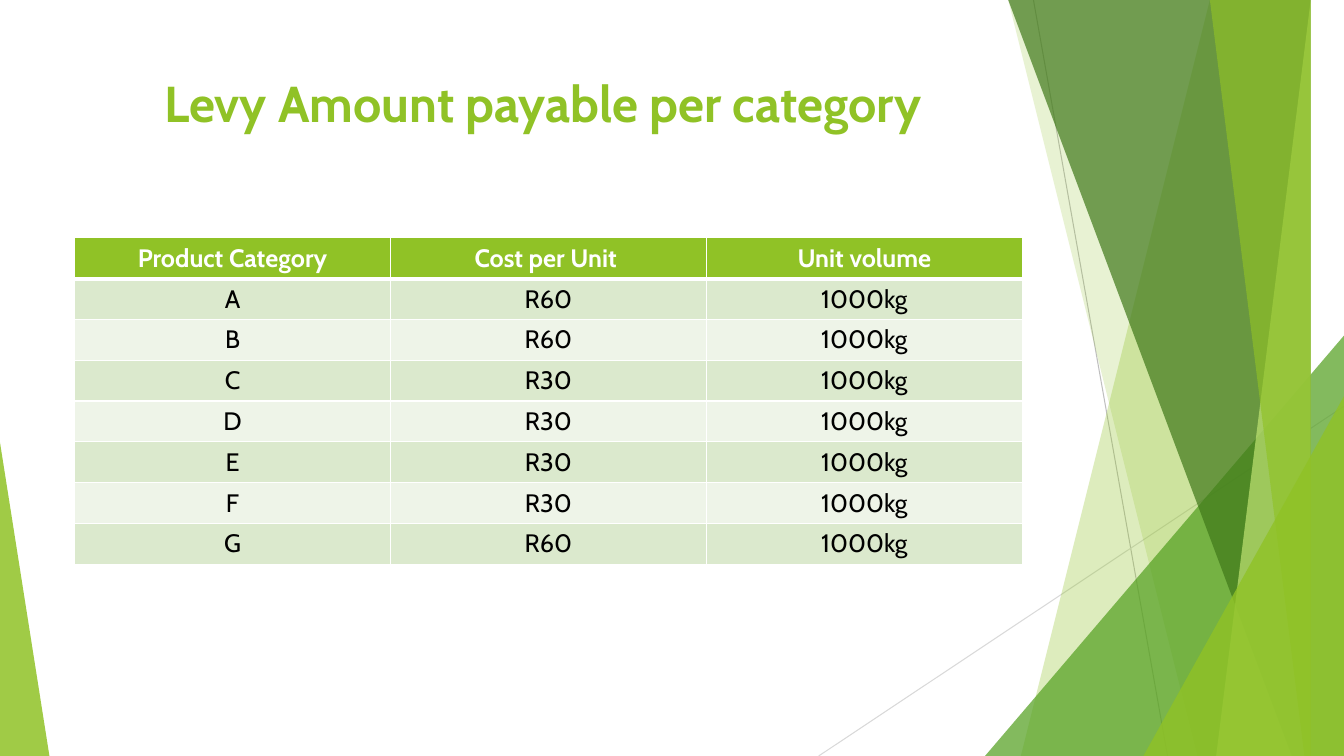
from lxml import etree
from pptx import Presentation
from pptx import util as u
from pptx.dml.color import RGBColor
from pptx.enum import shapes, text
from pptx.oxml.ns import qn

TITLE = "Levy Amount payable per category "
HEADER = ("Product Category", "Cost per Unit ", "Unit volume")
COSTS = {"A": "R60", "B": "R60", "C": "R30", "D": "R30", "E": "R30", "F": "R30", "G": "R60"}
VOLUME = "1000kg"
ROWS = [HEADER] + [(category, cost, VOLUME) for category, cost in COSTS.items()]

FONT = "Cabin"
LIME = RGBColor(0x90, 0xC2, 0x26)
GREEN = RGBColor(0x54, 0xA0, 0x21)
FOREST = RGBColor(0x3F, 0x78, 0x19)
PALE_LIME = RGBColor(0xC0, 0xE4, 0x74)
BAND_DARK = RGBColor(0xDB, 0xE9, 0xCD)
BAND_LIGHT = RGBColor(0xEE, 0xF4, 0xE8)
SILVER = RGBColor(0xBF, 0xBF, 0xBF)
MIST = RGBColor(0xD9, 0xD9, 0xD9)
WHITE = RGBColor(0xFF, 0xFF, 0xFF)
BLACK = RGBColor(0, 0, 0)

WIDTH, HEIGHT = 13.33, 7.5
LEFT, CONTENT_WIDTH = 0.74, 9.4
TITLE_TOP, TITLE_HEIGHT = 0.67, 1.44
TABLE_TOP, ROW_HEIGHT = 2.36, 0.405

RAYS = [((10.25, 0), (11.58, HEIGHT), SILVER), ((WIDTH, 4.03), (8.12, HEIGHT), MIST)]
FACETS = [
    ("band", 12.28, 10.04, LIME, 30),
    ("band", 10.5, 11.83, LIME, 20),
    ("corner", 9.77, 3.33, GREEN, 72),
    ("band", 10.21, 12.91, FOREST, 70),
    ("band", 13.03, 11.92, PALE_LIME, 70),
    ("band", 11.96, 13.18, LIME, 65),
    ("corner", 11.34, 3.93, LIME, 80),
]
LEFT_CORNER_WIDTH, LEFT_CORNER_TOP = 0.49, 4.39


def paint(shape, color, opacity):
    shape.shadow.inherit = False
    shape.line.fill.background()
    shape.fill.solid()
    shape.fill.fore_color.rgb = color
    color_node = shape.fill._xPr.find(qn("a:solidFill"))[0]
    etree.SubElement(color_node, qn("a:alpha"), val=str(opacity * 1000))


def add_ray(page, start, end, color):
    ray = page.shapes.add_connector(
        shapes.MSO_CONNECTOR.STRAIGHT, *(u.Inches(value) for value in start + end))
    ray.line.color.rgb = color
    ray.line.width = u.Pt(0.75)
    etree.SubElement(ray._element.spPr, qn("a:effectLst"))


def add_band(page, top_x, bottom_x, color, opacity):
    builder = page.shapes.build_freeform(top_x, 0, scale=u.Inches(1))
    builder.add_line_segments([(WIDTH, 0), (WIDTH, HEIGHT), (bottom_x, HEIGHT)])
    paint(builder.convert_to_shape(), color, opacity)


def add_corner(page, left, top, width, apex, color, opacity):
    corner = page.shapes.add_shape(
        shapes.MSO_SHAPE.ISOSCELES_TRIANGLE,
        u.Inches(left), u.Inches(top), u.Inches(width), u.Inches(HEIGHT - top))
    corner.adjustments[0] = apex
    paint(corner, color, opacity)


def write(frame, words, size, color, bold):
    para = frame.paragraphs[0]
    para.alignment = text.PP_ALIGN.CENTER
    span = para.add_run()
    span.text = words
    span.font.name = FONT
    span.font.size = u.Pt(size)
    span.font.bold = bold
    span.font.color.rgb = color


def add_borders(cell, bottom_points):
    properties = cell._tc.get_or_add_tcPr()
    sides = {"L": 1, "R": 1, "T": 1, "B": bottom_points}
    for index, (side, points) in enumerate(sides.items()):
        border = etree.Element(qn("a:ln" + side), w=str(u.Pt(points)))
        fill = etree.SubElement(border, qn("a:solidFill"))
        etree.SubElement(fill, qn("a:srgbClr"), val=str(WHITE))
        properties.insert(index, border)


def add_title(page):
    box = page.shapes.add_textbox(
        u.Inches(LEFT), u.Inches(TITLE_TOP), u.Inches(CONTENT_WIDTH), u.Inches(TITLE_HEIGHT))
    box.text_frame.word_wrap = True
    write(box.text_frame, TITLE, 36, LIME, True)


def add_levy_table(page):
    table = page.shapes.add_table(
        len(ROWS), len(HEADER), u.Inches(LEFT), u.Inches(TABLE_TOP),
        u.Inches(CONTENT_WIDTH), u.Inches(ROW_HEIGHT * len(ROWS))).table
    for row, values in enumerate(ROWS):
        is_header = row == 0
        band = LIME if is_header else BAND_DARK if row % 2 else BAND_LIGHT
        for column, value in enumerate(values):
            cell = table.cell(row, column)
            cell.margin_left = cell.margin_right = u.Inches(0.08)
            cell.margin_top = cell.margin_bottom = u.Inches(0.05)
            cell.fill.solid()
            cell.fill.fore_color.rgb = band
            add_borders(cell, 3 if is_header else 1)
            write(cell.text_frame, value, 18, WHITE if is_header else BLACK, is_header)
            if row == 1:
                top_border = cell._tc.tcPr.find(qn("a:lnT"))
                top_border.set("w", str(u.Pt(3)))


def main():
    deck = Presentation()
    deck.slide_width, deck.slide_height = u.Inches(WIDTH), u.Inches(HEIGHT)
    page = deck.slides.add_slide(deck.slide_layouts[6])
    for start, end, color in RAYS:
        add_ray(page, start, end, color)
    for kind, first, second, color, opacity in FACETS:
        if kind == "band":
            add_band(page, first, second, color, opacity)
        else:
            add_corner(page, first, second, WIDTH - first, 1, color, opacity)
    add_corner(page, 0, LEFT_CORNER_TOP, LEFT_CORNER_WIDTH, 0, LIME, 85)
    add_title(page)
    add_levy_table(page)
    deck.save("out.pptx")


if __name__ == "__main__":
    main()
